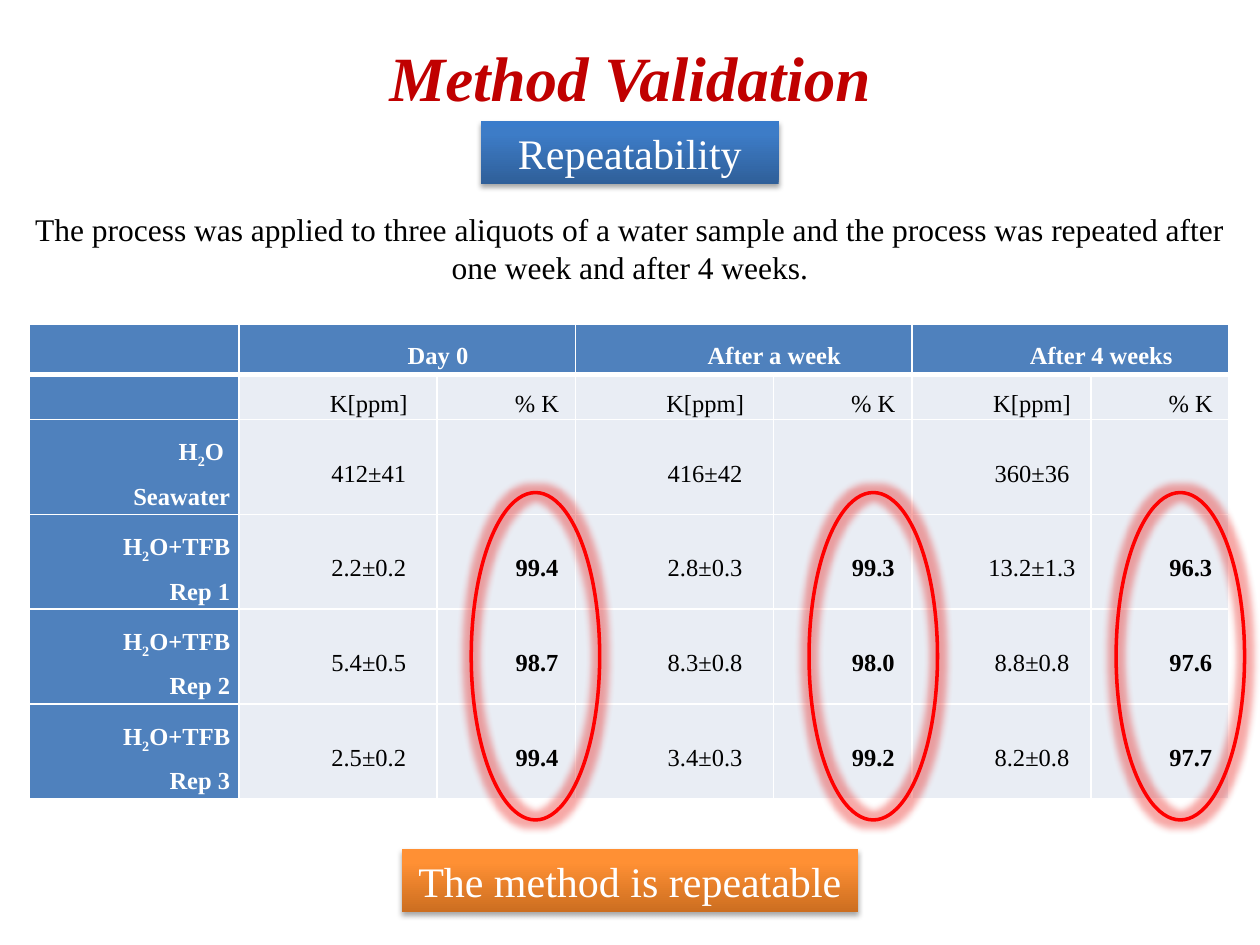
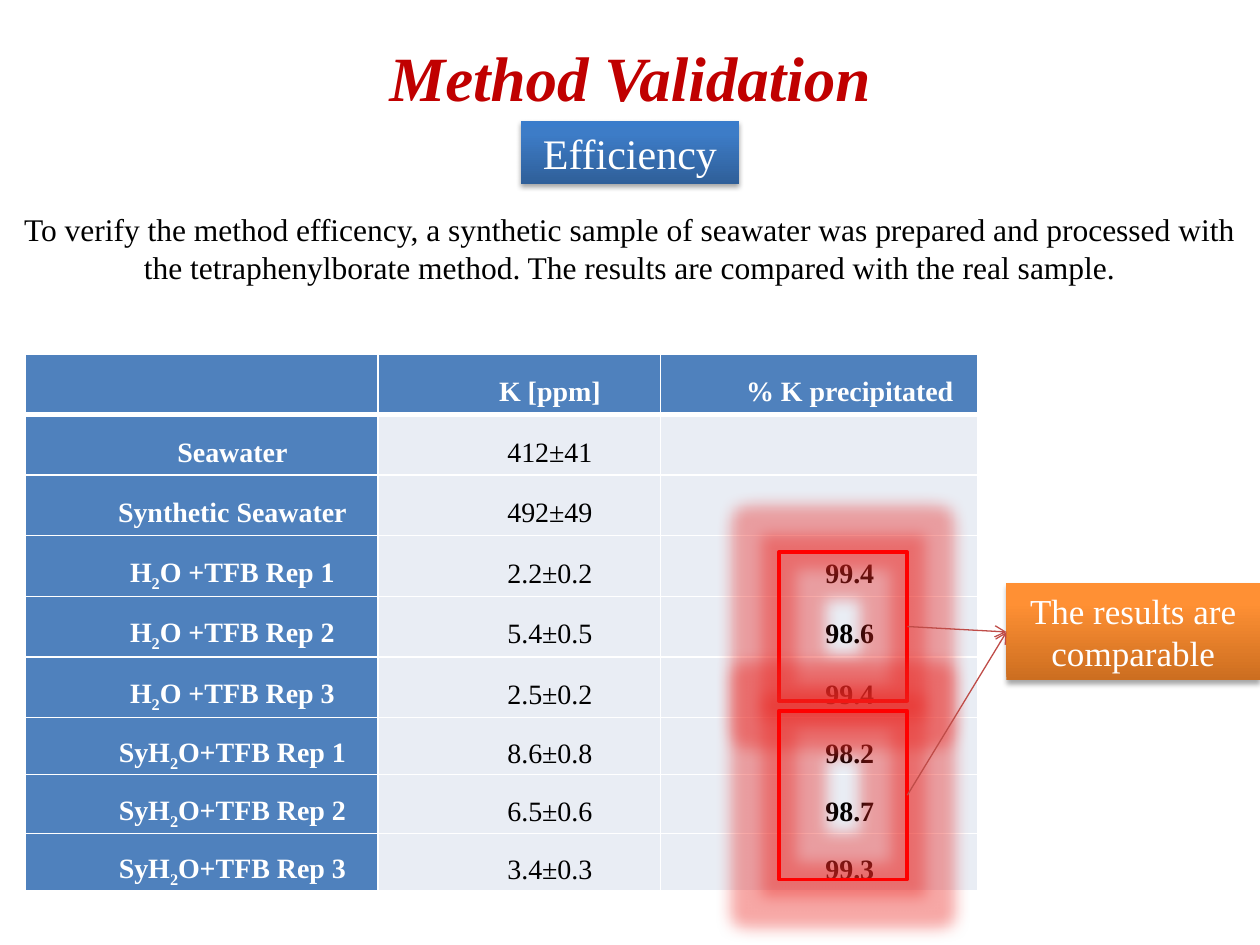
from copy import deepcopy
from lxml.etree import SubElement
from pptx import Presentation
from pptx.dml.color import RGBColor
from pptx.enum.shapes import MSO_CONNECTOR, MSO_SHAPE
from pptx.enum.text import MSO_ANCHOR, PP_ALIGN
from pptx.oxml.ns import qn
from pptx.util import Cm, Pt

# Shared style
FONT = "Times New Roman"
WIDE, HIGH = 25.4, 19.05
WHITE, BLACK, RED, CRIMSON = "FFFFFF", "000000", "FF0000", "C00000"
HEAD, BODY, GLOW, ARROW = "4F81BD", "E9EDF4", "EB2722", "BF4C48"
BLUE = [(0, "2F5F99"), (0.8, "3D7CC7"), (1, "3A7CCB")]
ORANGE = [(0, "CC6E20"), (0.8, "FF9034"), (1, "FF9136")]
TITLE = "Method Validation"

# Content; boxes are left, top, width, height in cm
REPEAT = {
    "tag": ("Repeatability", 6),
    "intro": "The process was applied to three aliquots of a water sample and the "
             "process was repeated after one week and after 4 weeks.",
    "table": {
        "at": (0.58, 6.53), "size": 14, "label": PP_ALIGN.RIGHT,
        "cols": [4.24, 3.99, 2.79, 3.99, 2.79, 3.61, 2.79],
        "rows": [1.02, 0.91] + [1.91] * 4,
        "spans": [(1, 2), (3, 4), (5, 6)],
        "cells": [
            ["", "Day 0", "", "After a week", "", "After 4 weeks", ""],
            [""] + ["K[ppm]", "% K"] * 3,
            ["H₂O \nSeawater", "412±41", "", "416±42", "", "360±36", ""],
            ["H₂O+TFB Rep 1", "2.2±0.2", "99.4", "2.8±0.3", "99.3", "13.2±1.3", "96.3"],
            ["H₂O+TFB Rep 2", "5.4±0.5", "98.7", "8.3±0.8", "98.0", "8.8±0.8", "97.6"],
            ["H₂O+TFB Rep 3", "2.5±0.2", "99.4", "3.4±0.3", "99.2", "8.2±0.8", "97.7"],
        ],
    },
    "verdict": ("The method is repeatable", 24, (8.1, 17.12, 9.2, 1.27)),
    "marks": [(left, 9.93, 2.59, 6.6) for left in (9.5, 16.31, 22.5)],
}
EFFICIENCY = {
    "tag": ("Efficiency", 4.4),
    "intro": "To verify the method efficency, a synthetic sample of seawater was "
             "prepared and processed with the tetraphenylborate method. The results "
             "are compared with the real sample.",
    "table": {
        "at": (0.51, 7.14), "size": 16, "label": PP_ALIGN.CENTER,
        "cols": [7.11, 5.69, 6.4],
        "rows": [1.22] * 6 + [1.09, 1.19, 1.07],
        "spans": [],
        "cells": [
            ["", "K [ppm]", "% K precipitated"],
            ["Seawater", "412±41", ""],
            ["Synthetic Seawater", "492±49", ""],
            ["H₂O +TFB Rep 1", "2.2±0.2", "99.4"],
            ["H₂O +TFB Rep 2", "5.4±0.5", "98.6"],
            ["H₂O +TFB Rep 3", "2.5±0.2", "99.4"],
            ["SyH₂O+TFB Rep 1", "8.6±0.8", "98.2"],
            ["SyH₂O+TFB Rep 2", "6.5±0.6", "98.7"],
            ["SyH₂O+TFB Rep 3", "3.4±0.3", "99.3"],
        ],
    },
    "verdict": ("The results are comparable", 20, (20.29, 11.76, 5.11, 1.96)),
    "marks": [(15.7, 11.13, 2.59, 3), (15.7, 14.33, 2.59, 3.4)],
}


def rgb(code):
    return RGBColor.from_string(code)


def cms(box):
    return [Cm(n) for n in box]


def write(par, text, size, color, bold=False, italic=False, align=PP_ALIGN.CENTER):
    """Fill a paragraph, lowering each ₂ as a subscript run."""
    par.alignment = align
    for i, piece in enumerate(text.replace("₂", "|2|").split("|")):
        run = par.add_run()
        run.text = piece
        font = run.font
        font.name, font.size, font.bold, font.italic = FONT, Pt(size), bold, italic
        font.color.rgb = rgb(color)
        if i % 2:
            font._element.set("baseline", "-25000")


def add_color(parent, code, alpha):
    node = SubElement(parent, qn("a:srgbClr"), val=code)
    SubElement(node, qn("a:alpha"), val=str(alpha * 1000))


def add_effect(shape, kind, code, alpha, **attrs):
    shape.shadow.inherit = False
    group = shape._element.spPr.find(qn("a:effectLst"))
    node = SubElement(group, qn("a:" + kind), {k: str(v) for k, v in attrs.items()})
    add_color(node, code, alpha)


def add_badge(slide, text, size, box, stops):
    """Gradient box with a soft shadow and white text."""
    shape = slide.shapes.add_shape(MSO_SHAPE.RECTANGLE, *cms(box))
    shape.line.fill.background()
    shape.fill.gradient()
    shape.fill.gradient_angle = 90
    group = shape._element.spPr.find(".//" + qn("a:gsLst"))
    group.append(deepcopy(group[-1]))
    for stop, (place, code) in zip(shape.fill.gradient_stops, stops):
        stop.position = place
        stop.color.rgb = rgb(code)
    add_effect(shape, "outerShdw", BLACK, 35, blurRad=Pt(3.1), dist=Pt(1.8),
               dir=5400000, rotWithShape=0)
    shape.text_frame.word_wrap = True
    write(shape.text_frame.paragraphs[0], text, size, WHITE)
    return shape


def add_mark(slide, kind, box, glow):
    shape = slide.shapes.add_shape(kind, *cms(box))
    shape.fill.background()
    shape.line.color.rgb = rgb(RED)
    shape.line.width = Pt(2)
    add_effect(shape, "glow", GLOW, 40, rad=Pt(glow))
    return shape


def add_arrow(slide, start, end):
    line = slide.shapes.add_connector(MSO_CONNECTOR.STRAIGHT, 0, 0, 0, 0)
    line.begin_connect(start, 3)
    line.end_connect(end, 1)
    line.line.color.rgb = rgb(ARROW)
    line.line.width = Pt(0.75)
    SubElement(line.line._get_or_add_ln(), qn("a:tailEnd"), type="arrow")
    SubElement(line._element.spPr, qn("a:effectLst"))


def set_edges(cell, top, bottom):
    props = cell._tc.get_or_add_tcPr()
    for side, width in (("L", 1), ("R", 1), ("T", top), ("B", bottom)):
        edge = SubElement(props, qn("a:ln" + side), w=str(Pt(width)))
        fill = SubElement(edge, qn("a:solidFill"))
        SubElement(fill, qn("a:srgbClr"), val=WHITE)


def fill_cell(cell, text, head, size, align):
    cell.margin_left = cell.margin_right = Cm(0.18)
    cell.margin_top = cell.margin_bottom = 0
    cell.vertical_anchor = MSO_ANCHOR.MIDDLE
    cell.fill.solid()
    cell.fill.fore_color.rgb = rgb(HEAD if head else BODY)
    if not text:
        return
    share = text[0].isdigit() and "±" not in text
    frame = cell.text_frame
    for i, part in enumerate(text.split("\n")):
        par = frame.add_paragraph() if i else frame.paragraphs[0]
        props = par._p.get_or_add_pPr()
        props.set("marL", "0")
        props.set("indent", str(Cm(1.24)))
        par.line_spacing = 1.5
        write(par, part, size, WHITE if head else BLACK, head or share, align=align)


def add_grid(slide, data):
    cols, rows = data["cols"], data["rows"]
    box = (*data["at"], sum(cols), sum(rows))
    table = slide.shapes.add_table(len(rows), len(cols), *cms(box)).table
    table.horz_banding = False
    for col, width in zip(table.columns, cols):
        col.width = Cm(width)
    for row, height in zip(table.rows, rows):
        row.height = Cm(height)
    for r, texts in enumerate(data["cells"]):
        for c, text in enumerate(texts):
            cell = table.cell(r, c)
            set_edges(cell, 3 if r == 1 else 1, 3 if r == 0 else 1)
            align = data["label"] if r and not c else PP_ALIGN.CENTER
            fill_cell(cell, text, r == 0 or c == 0, data["size"], align)
    for first, last in data["spans"]:
        table.cell(0, first).merge(table.cell(0, last))


def add_page(deck, data, kind, glow):
    """Title, tag, intro, table, verdict and marks, common to both slides."""
    slide = deck.slides.add_slide(deck.slide_layouts[5])
    title = slide.shapes.title
    title.left, title.top, title.width, title.height = cms((1.27, -0.05, 22.86, 3.18))
    title.text_frame.vertical_anchor = MSO_ANCHOR.MIDDLE
    write(title.text_frame.paragraphs[0], TITLE, 36, CRIMSON, True, True)

    name, width = data["tag"]
    add_badge(slide, name, 24, ((WIDE - width) / 2, 2.44, width, 1.27), BLUE)
    intro = slide.shapes.add_textbox(*cms((0, 4.11, WIDE, 1.8))).text_frame
    intro.word_wrap = True
    write(intro.paragraphs[0], data["intro"], 18, BLACK)
    add_grid(slide, data["table"])
    verdict = add_badge(slide, *data["verdict"], ORANGE)
    marks = [add_mark(slide, kind, box, glow) for box in data["marks"]]
    return slide, verdict, marks


def main():
    deck = Presentation()
    deck.slide_width, deck.slide_height = Cm(WIDE), Cm(HIGH)
    add_page(deck, REPEAT, MSO_SHAPE.OVAL, 8)
    slide, verdict, marks = add_page(deck, EFFICIENCY, MSO_SHAPE.RECTANGLE, 18)
    for mark in marks:
        add_arrow(slide, mark, verdict)
    deck.save("out.pptx")


if __name__ == "__main__":
    main()
